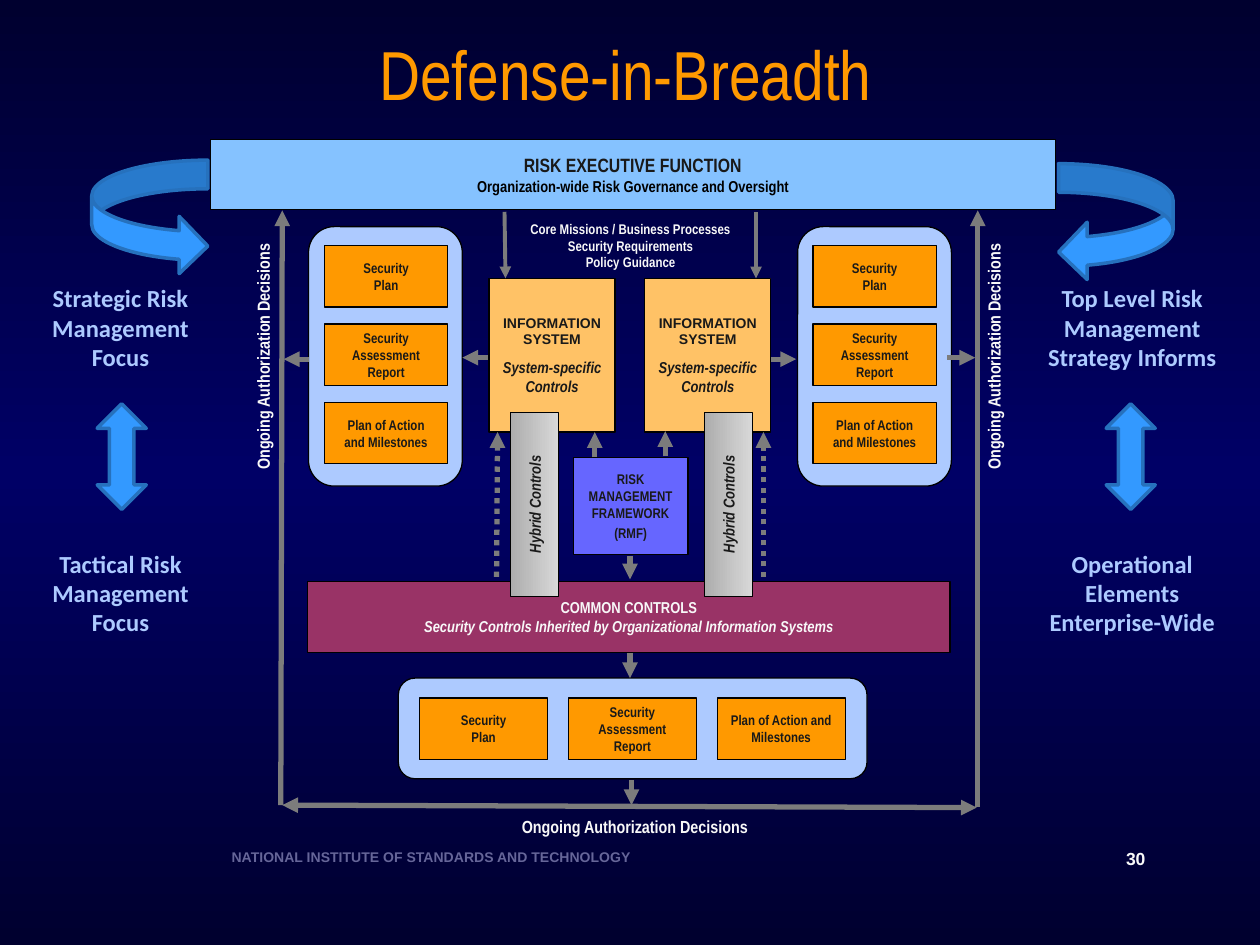
from copy import deepcopy

from lxml import etree
from pptx import Presentation
from pptx.dml.color import RGBColor
from pptx.enum.dml import MSO_LINE
from pptx.enum.shapes import MSO_CONNECTOR, MSO_SHAPE
from pptx.enum.text import MSO_ANCHOR, PP_ALIGN
from pptx.oxml.ns import qn
from pptx.util import Cm, Pt

NAVY = RGBColor(0x00, 0x00, 0x2F)
MID_BLUE = RGBColor(0x00, 0x00, 0x66)
ORANGE = RGBColor(0xFF, 0x99, 0x00)
SAND = RGBColor(0xFF, 0xC2, 0x66)
PALE_BLUE = RGBColor(0xAD, 0xCA, 0xFF)
SKY = RGBColor(0x85, 0xC2, 0xFF)
ARROW_BLUE = RGBColor(0x33, 0x99, 0xFF)
ARROW_EDGE = RGBColor(0x26, 0x71, 0xBD)
VIOLET = RGBColor(0x66, 0x66, 0xFF)
PLUM = RGBColor(0x99, 0x33, 0x66)
FOOTER = RGBColor(0x66, 0x66, 0x99)
GREY = RGBColor(0x7C, 0x7C, 0x7C)
DARK_GREY = RGBColor(0xAD, 0xAD, 0xAD)
LIGHT_GREY = RGBColor(0xD8, 0xD8, 0xD8)
INK = RGBColor(0x19, 0x19, 0x19)
BLACK = RGBColor(0x00, 0x00, 0x00)
WHITE = RGBColor(0xF8, 0xF8, 0xF8)

RECT = MSO_SHAPE.RECTANGLE
ROUND = MSO_SHAPE.ROUNDED_RECTANGLE
UP_DOWN = MSO_SHAPE.UP_DOWN_ARROW
CURVED_LEFT = MSO_SHAPE.CURVED_LEFT_ARROW
CURVED_RIGHT = MSO_SHAPE.CURVED_RIGHT_ARROW
STRAIGHT = MSO_CONNECTOR.STRAIGHT
DOTTED = MSO_LINE.ROUND_DOT
MIDDLE = MSO_ANCHOR.MIDDLE
CENTER = PP_ALIGN.CENTER
LEFT = PP_ALIGN.LEFT
NARROW = "Arial Narrow"

prs = Presentation()
prs.slide_width, prs.slide_height = Cm(25.4), Cm(19.05)
s = prs.slides.add_slide(prs.slide_layouts[5])


def add_box(kind, x, y, w, h, fill=None, edge=BLACK, width=0.75):
    """Add a preset shape, or a text box when kind is None."""
    place = Cm(x), Cm(y), Cm(w), Cm(h)
    if kind is None:
        return s.shapes.add_textbox(*place)
    sp = s.shapes.add_shape(kind, *place)
    sp.shadow.inherit = False
    if fill is not None:
        sp.fill.solid()
        sp.fill.fore_color.rgb = fill
    sp.line.color.rgb = edge
    sp.line.width = Pt(width)
    return sp


def write(sp, lines, size=8, color=INK, font=NARROW, align=CENTER, gap=0, vertical=False):
    """Fill sp with bold lines; a line is a text or (text, changed settings)."""
    tf = sp.text_frame
    tf.word_wrap = True
    tf.vertical_anchor = MIDDLE
    tf.margin_top = tf.margin_bottom = 0
    if vertical:
        sp.element.find(".//" + qn("a:bodyPr")).set("vert", "vert270")
    for i, line in enumerate(lines):
        text, style = (line, {}) if isinstance(line, str) else line
        p = tf.paragraphs[0] if i == 0 else tf.add_paragraph()
        p.alignment = align
        if i:
            p.space_before = Pt(gap)
        r = p.add_run()
        r.text = text
        r.font.bold = True
        r.font.name = style.get("font", font)
        r.font.size = Pt(style.get("size", size))
        r.font.italic = style.get("italic", False)
        r.font.color.rgb = style.get("color", color)


# Background and title
fill = s.background.fill
fill.gradient()
fill.gradient_angle = 90
for stop, color in zip(fill.gradient_stops, (NAVY, MID_BLUE)):
    stop.color.rgb = color
stops = s.element.find(".//" + qn("a:gsLst"))
stops.append(deepcopy(stops[0]))
for stop, position in zip(stops, (0, 50000, 100000)):
    stop.set("pos", str(position))

title = s.shapes.title
title.left, title.top, title.width, title.height = Cm(1.75), Cm(0.48), Cm(21.72), Cm(1.98)
title.text_frame.vertical_anchor = MIDDLE
p = title.text_frame.paragraphs[0]
p.alignment = CENTER
r = p.add_run()
r.text = "Defense-in-Breadth"
r.font.name, r.font.size, r.font.color.rgb = NARROW, Pt(39.6), ORANGE

# Footer and slide number
write(add_box(None, 4.42, 16.99, 18.42, 0.58),
      ["NATIONAL INSTITUTE OF STANDARDS AND TECHNOLOGY"], 8, FOOTER, "Arial", LEFT)
write(add_box(None, 22.45, 16.97, 1.07, 0.69), ["30"], 10, WHITE, "Arial", LEFT)

# Side columns: focus texts with a two-way arrow between them
sides = [
    (0.51, 3.84, 1.96, ["Strategic Risk Management", "Focus"],
     ["Tactical Risk Management Focus"]),
    (20.83, 3.99, 22.3, ["Top Level Risk Management", "Strategy Informs"],
     ["Operational Elements Enterprise-Wide"]),
]
for x, w, arrow_x, upper, lower in sides:
    for y, lines in ((5.5, upper), (10.85, lower)):
        write(add_box(None, x, y, w, 2.2), lines, 14, PALE_BLUE, "Calibri")
    add_box(UP_DOWN, arrow_x, 8.14, 0.99, 2.13, ARROW_BLUE, ARROW_EDGE, 2)
add_box(CURVED_LEFT, 21.34, 3.3, 2.31, 2.36, ARROW_BLUE, ARROW_EDGE, 2)
add_box(CURVED_RIGHT, 1.85, 3.23, 2.34, 2.31, ARROW_BLUE, ARROW_EDGE, 2)

# Authorization documents: two upright panels and one lying panel
documents = [["Security", "Plan"], ["Security Assessment Report"],
             ["Plan of Action and Milestones"]]
panels = [  # panel x, y, w, h, then first document x, y, its width, and steps
    (6.22, 4.57, 3.1, 5.23, 6.54, 4.95, 2.49, 0, 1.58),
    (16.08, 4.57, 3.1, 5.23, 16.39, 4.95, 2.49, 0, 1.58),
    (8.03, 13.67, 9.45, 2.03, 8.46, 14.07, 2.58, 3, 0),
]
for x, y, w, h, doc_x, doc_y, doc_w, step_x, step_y in panels:
    add_box(ROUND, x, y, w, h, PALE_BLUE)
    for i, lines in enumerate(documents):
        doc = add_box(RECT, doc_x + i * step_x, doc_y + i * step_y, doc_w, 1.24, ORANGE)
        write(doc, lines)

# Organization level
write(add_box(RECT, 4.24, 2.82, 17.04, 1.4, SKY),
      [("RISK EXECUTIVE FUNCTION", {"size": 11}),
       ("Organization-wide Risk Governance and Oversight", {"color": BLACK})], 9)
write(add_box(None, 10.19, 4.29, 5.05, 1.32),
      ["Core Missions / Business Processes", "Security Requirements", "Policy Guidance"],
      color=WHITE)

# Controls and framework
write(add_box(RECT, 6.2, 11.73, 12.95, 1.42, PLUM),
      ["COMMON CONTROLS",
       ("Security Controls Inherited by Organizational Information Systems",
        {"italic": True})], 9, WHITE)
write(add_box(RECT, 11.56, 9.22, 2.31, 1.96, VIOLET),
      ["RISK MANAGEMENT FRAMEWORK", "(RMF)"], gap=2)
for system_x, hybrid_x in ((9.86, 10.29), (13, 14.2)):
    write(add_box(RECT, system_x, 5.61, 2.54, 3.1, SAND),
          [("INFORMATION SYSTEM", {"font": "Arial"}),
           ("System-specific Controls", {"size": 9, "italic": True})], gap=6)
    hybrid = add_box(RECT, hybrid_x, 8.31, 0.97, 3.71)
    hybrid.fill.gradient()
    hybrid.fill.gradient_angle = 0
    for stop, color in zip(hybrid.fill.gradient_stops, (DARK_GREY, LIGHT_GREY)):
        stop.color.rgb = color
    write(hybrid, [("Hybrid Controls", {"italic": True})], 9, vertical=True)

# Authorization loop labels
decisions = ["Ongoing Authorization Decisions"]
for x in (4.83, 19.56):
    write(add_box(None, x, 4.5, 0.94, 5.38), decisions, 10, WHITE, vertical=True)
write(add_box(None, 8.03, 16.31, 9.53, 0.71), decisions, 10, WHITE)

# Arrows: start, end, width, dotted, arrowhead at start too
arrows = [
    (10.17, 4.27, 10.19, 5.61, 2.25, False, False),
    (15.24, 4.27, 15.24, 5.61, 2.25, False, False),
    (9.83, 7.21, 9.32, 7.21, 3, False, False),
    (6.22, 7.24, 5.72, 7.24, 3, False, False),
    (15.54, 7.24, 16.05, 7.24, 3, False, False),
    (19.1, 7.21, 19.66, 7.21, 3, False, False),
    (11.99, 9.22, 11.99, 8.71, 3, False, False),
    (13.41, 9.2, 13.41, 8.69, 3, False, False),
    (12.7, 11.2, 12.7, 11.68, 3, False, False),
    (12.7, 13.16, 12.7, 13.67, 3, False, False),
    (12.73, 15.72, 12.73, 16.23, 3, False, False),
    (10.01, 11.63, 10.03, 8.71, 3, True, False),
    (15.39, 11.63, 15.39, 8.71, 3, True, False),
    (5.66, 16.23, 5.69, 4.24, 3, False, False),
    (19.71, 16.26, 19.71, 4.24, 3, False, False),
    (5.69, 16.23, 19.69, 16.28, 3, False, True),
]
for x1, y1, x2, y2, width, dotted, two_way in arrows:
    line = s.shapes.add_connector(STRAIGHT, Cm(x1), Cm(y1), Cm(x2), Cm(y2))
    line.line.color.rgb = GREY
    line.line.width = Pt(width)
    if dotted:
        line.line.dash_style = DOTTED
    props = line.element.spPr
    ln = props.find(qn("a:ln"))
    for end in ("a:headEnd", "a:tailEnd") if two_way else ("a:tailEnd",):
        etree.SubElement(ln, qn(end)).set("type", "triangle")
    etree.SubElement(props, qn("a:effectLst"))

prs.save("out.pptx")
